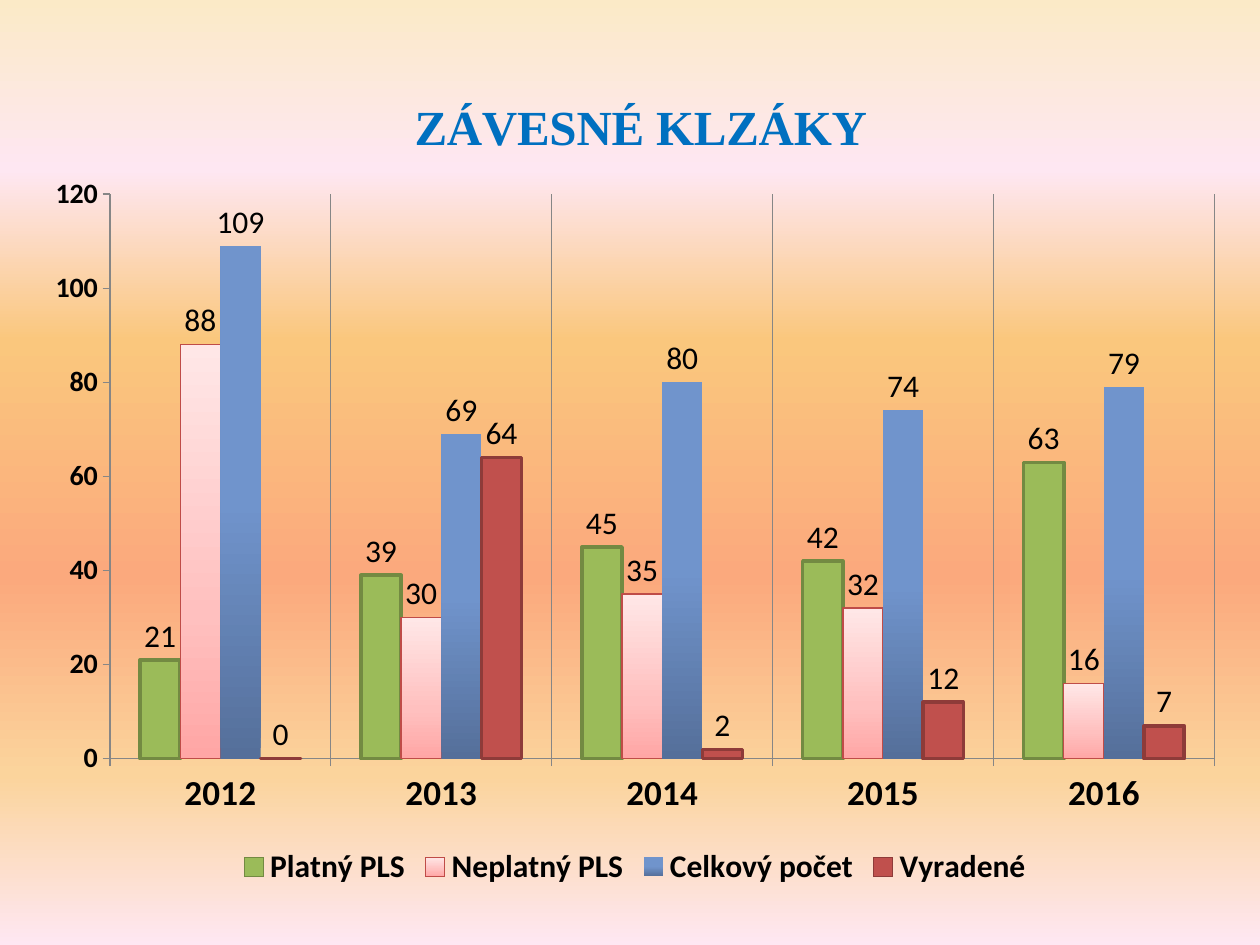
"""Build a slide with a clustered column chart of hang gliders by year."""
import pptx
import pptx.chart.data
import pptx.dml.color
import pptx.enum.chart
import pptx.oxml
import pptx.oxml.ns
import pptx.util

Inches, Pt = pptx.util.Inches, pptx.util.Pt
RGB = pptx.dml.color.RGBColor.from_string
enum = pptx.enum.chart

THEME = {
    "font": "Calibri", "head": "Times New Roman",
    "text": "000000", "title": "0070C0", "axis": "868686",
    "sizes": {"base": 18, "title": 28, "years": 20, "scale": 16},
    "back": [(0, "FBEAC7"), (18, "FEE7F2"), (36, "FAC77D"),
             (61, "FBA97D"), (82, "FBD49C"), (100, "FEE7F2")],
    "pink": [(0, "FFA6A5"), (35, "FFC0BF"), (100, "FFE7E7")],
    "blue": [(0, "556F9A"), (50, "7094CC"), (100, "7094CE")],
}
SIZES = THEME["sizes"]
YEARS = ["2012", "2013", "2014", "2015", "2016"]
SERIES = [
    ("Platný PLS", [21, 39, 45, 42, 63], "9BBB59", ("738A42", 2)),
    ("Neplatný PLS", [88, 30, 35, 32, 16], THEME["pink"], ("BF4C48", 0.75)),
    ("Celkový počet", [109, 69, 80, 74, 79], THEME["blue"], None),
    ("Vyradené", [0, 64, 2, 12, 7], "C0504D", ("8E3B39", 2)),
]


def put(item, vals):
    for name, val in vals.items():
        setattr(item, name, val)


def blend(fill, root, stops, angle):
    fill.gradient()
    fill.gradient_angle = angle
    group = root.find(".//" + pptx.oxml.ns.qn("a:gsLst"))
    for stop in list(group):
        group.remove(stop)
    for spot, tint in stops:
        group.append(pptx.oxml.parse_xml(
            f'<a:gs {pptx.oxml.ns.nsdecls("a")} pos="{spot * 1000}">'
            f'<a:srgbClr val="{tint}"/></a:gs>'))


deck = pptx.Presentation()
put(deck, {"slide_width": Inches(10), "slide_height": Inches(7.5)})
slide = deck.slides.add_slide(deck.slide_layouts[6])
blend(slide.background.fill, slide.element, THEME["back"], 270)

data = pptx.chart.data.CategoryChartData()
data.categories = YEARS
for name, vals, paint, edge in SERIES:
    data.add_series(name, vals)
chart = slide.shapes.add_chart(
    enum.XL_CHART_TYPE.COLUMN_CLUSTERED,
    Inches(0.25), Inches(0.43), Inches(9.58), Inches(6.65), data).chart
put(chart.font, {"name": THEME["font"], "size": Pt(SIZES["base"])})
chart.font.color.rgb = RGB(THEME["text"])

frame = chart.chart_title.text_frame
frame.text = "ZÁVESNÉ KLZÁKY"
font = frame.paragraphs[0].runs[0].font
put(font, {"name": THEME["head"], "size": Pt(SIZES["title"]), "bold": True})
font.color.rgb = RGB(THEME["title"])

put(chart, {"has_legend": True})
put(chart.legend, {"position": enum.XL_LEGEND_POSITION.BOTTOM,
                   "include_in_layout": False})
put(chart.legend.font, {"size": Pt(SIZES["base"]), "bold": True})

years, scale = chart.category_axis, chart.value_axis
put(years, {"has_major_gridlines": True})
put(scale, {"has_major_gridlines": False, "minimum_scale": 0,
            "maximum_scale": 120, "major_unit": 20})
for axis, size in ((years, SIZES["years"]), (scale, SIZES["scale"])):
    put(axis, {"major_tick_mark": enum.XL_TICK_MARK.OUTSIDE})
    put(axis.tick_labels.font, {"size": Pt(size), "bold": True})
for part in (years, scale, years.major_gridlines):
    part.format.line.color.rgb = RGB(THEME["axis"])
    part.format.line.width = Pt(0.75)

plot = chart.plots[0]
put(plot, {"gap_width": 150, "overlap": 0, "vary_by_categories": False,
           "has_data_labels": True})
put(plot.data_labels, {"show_value": True,
                       "position": enum.XL_LABEL_POSITION.OUTSIDE_END})
put(plot.data_labels.font, {"size": Pt(SIZES["base"])})
for bar, (name, vals, paint, edge) in zip(plot.series, SERIES):
    bar.invert_if_negative = False
    fill, line = bar.format.fill, bar.format.line
    if isinstance(paint, str):
        fill.solid()
        fill.fore_color.rgb = RGB(paint)
    else:
        blend(fill, bar._element, paint, 90)
    if edge:
        line.color.rgb = RGB(edge[0])
        line.width = Pt(edge[1])
    else:
        line.fill.background()

root = chart._chartSpace.chart
for tag, inner, place in (
        ("c:title", "", {"x": 0.31, "y": 0.04}),
        ("c:plotArea", '<c:layoutTarget val="inner"/>',
         {"x": 0.065, "y": 0.167, "w": 0.915, "h": 0.674})):
    node = root.find(pptx.oxml.ns.qn(tag))
    for old in node.findall(pptx.oxml.ns.qn("c:layout")):
        node.remove(old)
    modes = "".join(f'<c:{key}Mode val="edge"/>' for key in "xy")
    spots = "".join(f'<c:{key} val="{val}"/>' for key, val in place.items())
    layout = pptx.oxml.parse_xml(
        f'<c:layout {pptx.oxml.ns.nsdecls("c")}><c:manualLayout>'
        f'{inner}{modes}{spots}</c:manualLayout></c:layout>')
    node.insert(1 if tag == "c:title" else 0, layout)

deck.save("out.pptx")
